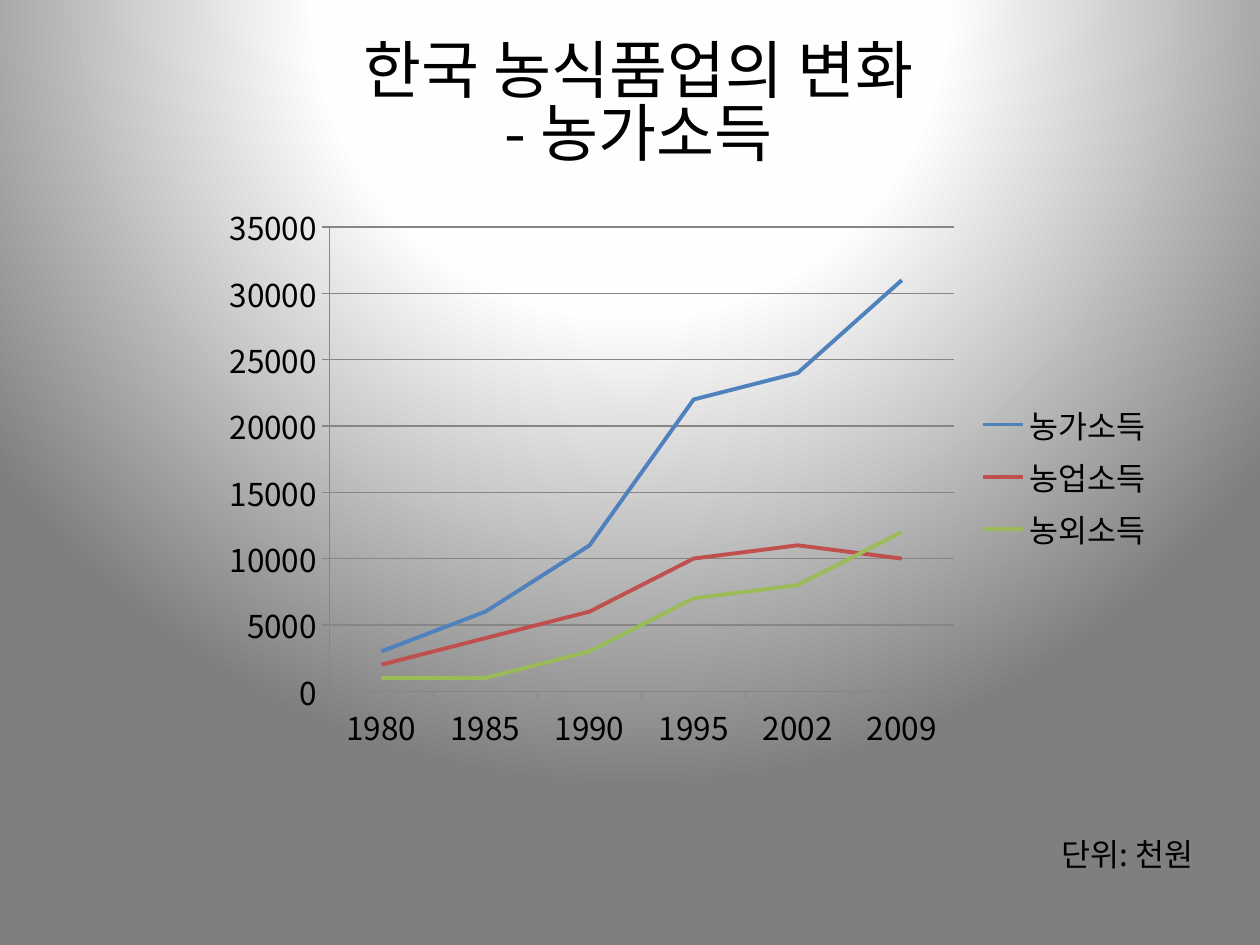
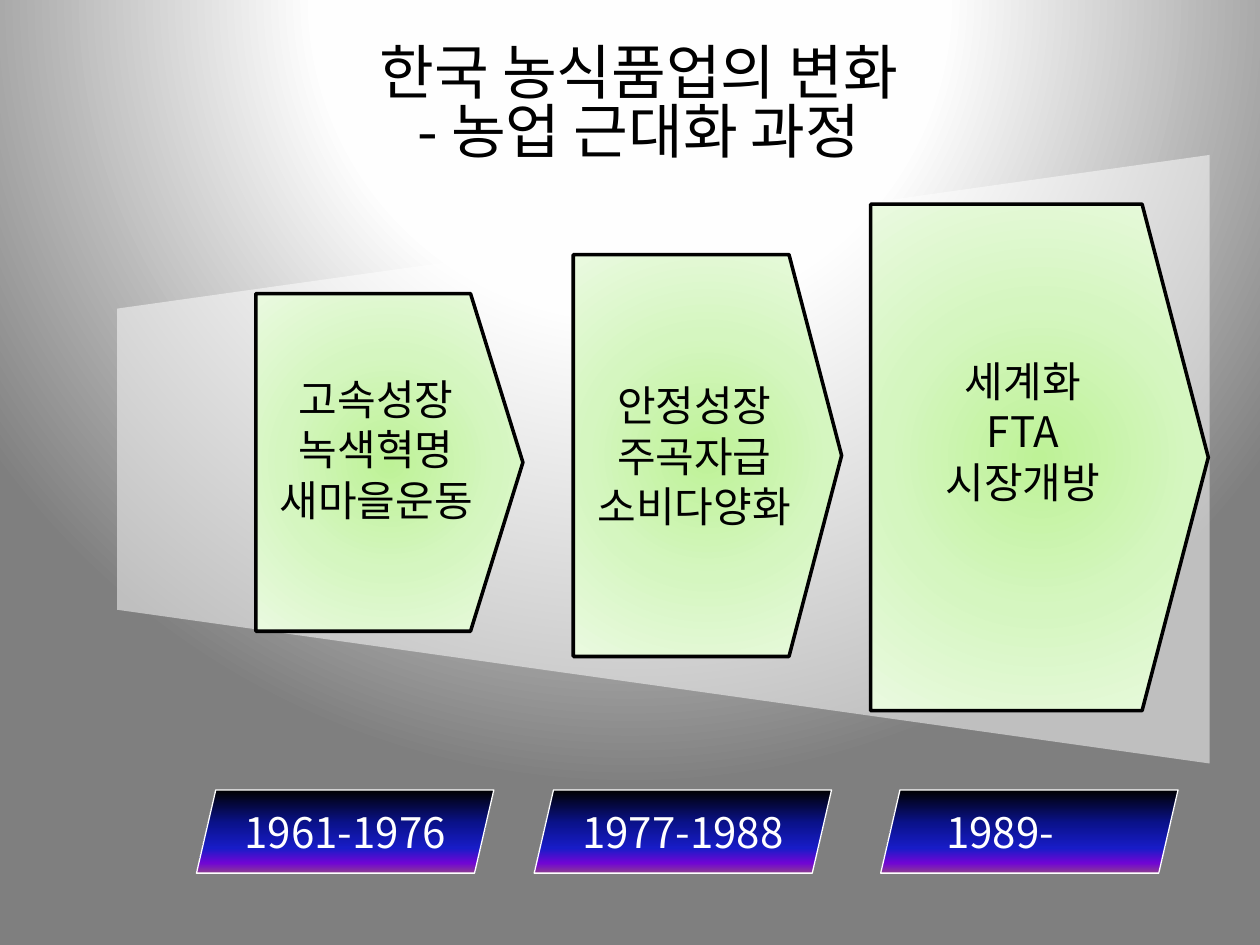
"""Build two slides on the change of Korean farming: an income chart and a timeline."""
import pptx
import pptx.chart.data
import pptx.dml.color
import pptx.enum.chart
import pptx.enum.shapes
import pptx.enum.text
import pptx.oxml.ns
import pptx.util
from lxml import etree

Inches = pptx.util.Inches
Pt = pptx.util.Pt
RGB = pptx.dml.color.RGBColor
qn = pptx.oxml.ns.qn
ALIGN = pptx.enum.text.PP_ALIGN
MIDDLE = pptx.enum.text.MSO_ANCHOR.MIDDLE
SHAPE = pptx.enum.shapes.MSO_SHAPE
CHART = pptx.enum.chart

FACE = "Noto Sans CJK KR"
BLACK = RGB(0x00, 0x00, 0x00)
WHITE = RGB(0xFF, 0xFF, 0xFF)
GRAY = RGB(0x86, 0x86, 0x86)
BLUE = RGB(0x4F, 0x81, 0xBD)
RED = RGB(0xC0, 0x50, 0x4D)
GREEN = RGB(0x9B, 0xBB, 0x59)
BACK = [(0, WHITE), (40, RGB(0xFE, 0xFE, 0xFE)), (100, RGB(0x7F, 0x7F, 0x7F))]
LEAF = [(0, RGB(0xBE, 0xF2, 0x97)), (50, RGB(0xD5, 0xF6, 0xC0)),
        (100, RGB(0xEA, 0xFA, 0xE0))]
NIGHT = [(0, BLACK), (40, RGB(0x0A, 0x12, 0x8C)), (70, RGB(0x18, 0x1C, 0xC7)),
         (88, RGB(0x70, 0x05, 0xD4)), (100, RGB(0x8C, 0x3D, 0x91))]


def shade(owner, fill, stops, focus=None):
    """Fill with stops, around a focus (left, top, right, bottom) or downwards."""
    fill.gradient()
    grad = next(owner._element.iter(qn("a:gradFill")))
    for child in list(grad):
        grad.remove(child)
    group = etree.SubElement(grad, qn("a:gsLst"))
    for place, color in stops:
        stop = etree.SubElement(group, qn("a:gs"), pos=str(place * 1000))
        etree.SubElement(stop, qn("a:srgbClr"), val=str(color))
    if focus:
        ring = etree.SubElement(grad, qn("a:path"), path="circle")
        sides = {side: str(part * 1000) for side, part in zip("ltrb", focus)}
        etree.SubElement(ring, qn("a:fillToRect"), sides)
    else:
        etree.SubElement(grad, qn("a:lin"), ang="5400000", scaled="0")


def style(font, size, color=BLACK):
    """Set the shared face, with a size and a colour."""
    font.size = Pt(size)
    font.color.rgb = color
    font.name = FACE
    etree.SubElement(font._element, qn("a:ea"), typeface=FACE)


deck = pptx.Presentation()
deck.slide_width = Inches(10)
deck.slide_height = Inches(7.5)

pages = []
for topic, size in [("농가소득", 36), ("농업 근대화 과정", 34)]:
    page = deck.slides.add_slide(deck.slide_layouts[6])
    shade(page, page.background.fill, BACK, (50, -80, 50, 180))
    title = page.shapes.add_textbox(Inches(0.57), Inches(0.22), Inches(9), Inches(1.25))
    frame = title.text_frame
    frame.word_wrap = True
    frame.vertical_anchor = MIDDLE
    frame.text = f"한국 농식품업의 변화\v- {topic}"
    line = frame.paragraphs[0]
    line.alignment = ALIGN.CENTER
    line.line_spacing = 0.83
    style(line.font, size)
    pages.append(page)
income, stages = pages

data = pptx.chart.data.CategoryChartData()
data.categories = ["1980", "1985", "1990", "1995", "2002", "2009"]
data.add_series("농가소득", [3000, 6000, 11000, 22000, 24000, 31000])
data.add_series("농업소득", [2000, 4000, 6000, 10000, 11000, 10000])
data.add_series("농외소득", [1000, 1000, 3000, 7000, 8000, 12000])
chart = income.shapes.add_chart(
    CHART.XL_CHART_TYPE.LINE, Inches(1.67), Inches(1.53), Inches(7.59), Inches(4.51), data
).chart
style(chart.font, 18)
chart.has_title = False
chart.has_legend = True
chart.legend.position = CHART.XL_LEGEND_POSITION.RIGHT
chart.legend.include_in_layout = False
chart.plots[0].vary_by_categories = False
for series, color in zip(chart.plots[0].series, [BLUE, RED, GREEN]):
    series.smooth = False
    series.marker.style = CHART.XL_MARKER_STYLE.NONE
    series.format.line.color.rgb = color
    series.format.line.width = Pt(2.25)
scale = chart.value_axis
scale.minimum_scale = 0
scale.maximum_scale = 35000
scale.major_unit = 5000
scale.has_major_gridlines = True
for axis in (chart.category_axis, scale):
    axis.major_tick_mark = CHART.XL_TICK_MARK.OUTSIDE
for part in (chart.category_axis, scale, scale.major_gridlines):
    part.format.line.color.rgb = GRAY
    part.format.line.width = Pt(0.75)

unit = income.shapes.add_textbox(Inches(7.6), Inches(6.58), Inches(1.97), Inches(0.4))
unit.text_frame.word_wrap = True
unit.text_frame.text = "단위: 천원"
line = unit.text_frame.paragraphs[0]
line.alignment = ALIGN.RIGHT
style(line.font, 18)

path = stages.shapes.build_freeform(Inches(9.6), Inches(1.23))
path.add_line_segments([(Inches(x), Inches(y))
                        for x, y in [(0.93, 2.45), (0.93, 4.84), (9.6, 6.06)]])
beam = path.convert_to_shape()
beam.shadow.inherit = False
beam.line.fill.background()
beam.fill.solid()
beam.fill.fore_color.rgb = WHITE
tint = next(beam._element.iter(qn("a:srgbClr")))
etree.SubElement(tint, qn("a:alpha"), val="50000")

eras = [
    (2.03, 2.33, 2.12, 2.68, 0.26, ["고속성장", "녹색혁명", "새마을운동"]),
    (4.55, 2.02, 2.13, 3.19, 0.05, ["안정성장", "주곡자급", "소비다양화"]),
    (6.91, 1.62, 2.68, 4.02, 0.47, ["세계화", "FTA", "시장개방"]),
]
for left, top, width, height, lift, words in eras:
    arrow = stages.shapes.add_shape(
        SHAPE.PENTAGON, Inches(left), Inches(top), Inches(width), Inches(height))
    arrow.adjustments[0] = 0.196
    arrow.shadow.inherit = False
    shade(arrow, arrow.fill, LEAF, (50, 50, 50, 50))
    arrow.line.color.rgb = BLACK
    arrow.line.width = Pt(2)
    frame = arrow.text_frame
    frame.word_wrap = True
    frame.vertical_anchor = MIDDLE
    frame.margin_bottom = Inches(lift)
    frame.text = "\n".join(words)
    for line in frame.paragraphs:
        line.alignment = ALIGN.CENTER
        style(line.font, 24)

for left, years, inset in [(1.56, "1961-1976", 0.1), (4.24, "1977-1988", 0.1),
                           (6.99, "1989-", 0.56)]:
    label = stages.shapes.add_shape(
        SHAPE.PARALLELOGRAM, Inches(left), Inches(6.27), Inches(2.36), Inches(0.66))
    label.adjustments[0] = 0.232
    label.shadow.inherit = False
    shade(label, label.fill, NIGHT)
    label.line.color.rgb = WHITE
    label.line.width = Pt(0.75)
    frame = label.text_frame
    frame.word_wrap = False
    frame.vertical_anchor = MIDDLE
    frame.margin_right = Inches(inset)
    frame.text = years
    line = frame.paragraphs[0]
    line.alignment = ALIGN.CENTER
    style(line.font, 24, WHITE)

deck.save("out.pptx")
